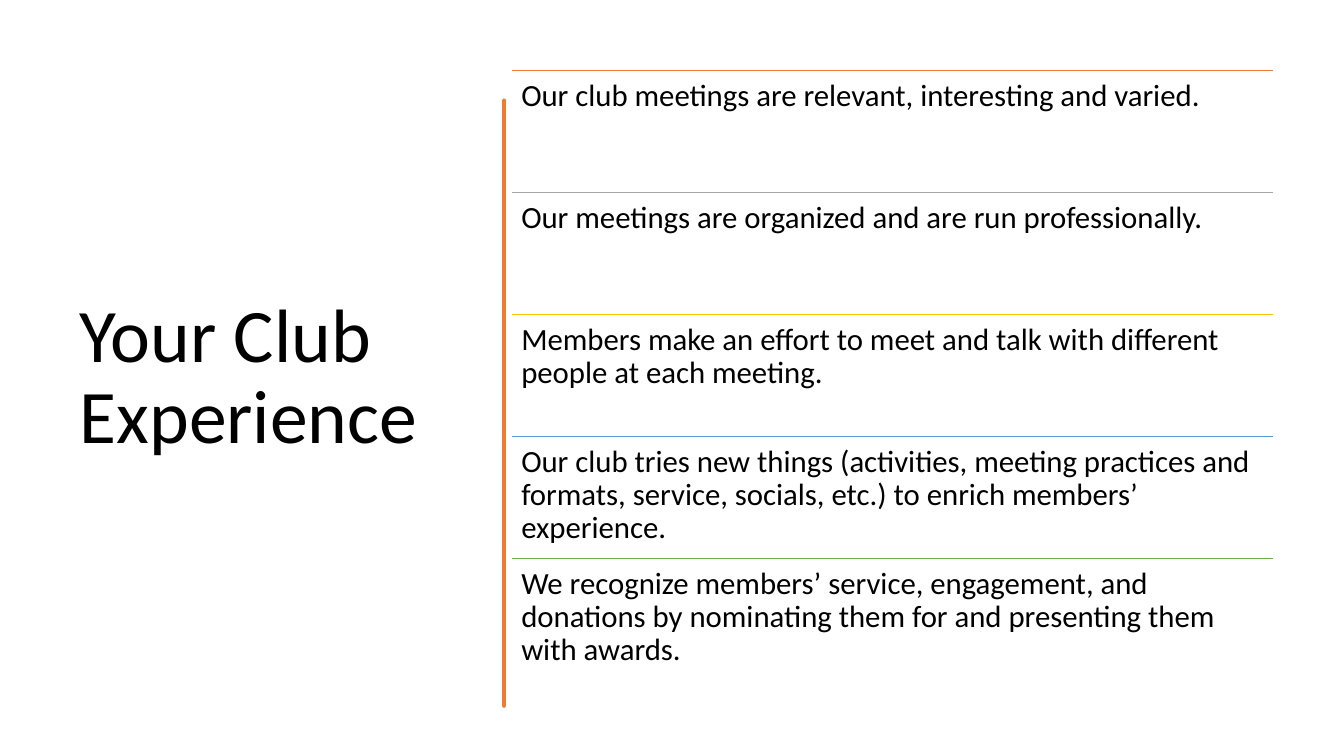
from dataclasses import dataclass

from lxml.etree import SubElement
from pptx import Presentation
from pptx.dml.color import RGBColor
from pptx.enum.shapes import MSO_CONNECTOR
from pptx.enum.text import MSO_ANCHOR, MSO_AUTO_SIZE, PP_ALIGN
from pptx.oxml.ns import qn
from pptx.slide import Slide
from pptx.text.text import _Paragraph as Paragraph
from pptx.util import Inches, Pt

BLACK = RGBColor(0x00, 0x00, 0x00)
ORANGE = RGBColor(0xED, 0x7D, 0x31)
GRAY = RGBColor(0xA5, 0xA5, 0xA5)
GOLD = RGBColor(0xFF, 0xC0, 0x00)
BLUE = RGBColor(0x5B, 0x9B, 0xD5)
GREEN = RGBColor(0x70, 0xAD, 0x47)

FONT = "Calibri"
TOP = 0.7
STATEMENT_LEFT = 5.08
STATEMENT_WIDTH = 7.55
STATEMENT_HEIGHT = 1.21
STATEMENT_INSET = 0.09

BRUSH_RIGHT = [
    (4.75, 0.84), (4.76, 1.15), (4.75, 1.49), (4.74, 1.9), (4.75, 2.26),
    (4.75, 2.94), (4.76, 3.3), (4.75, 3.6), (4.76, 4.0), (4.75, 4.33),
    (4.73, 4.7), (4.75, 5.13), (4.76, 5.5), (4.75, 5.81), (4.74, 6.2),
    (4.75, 6.76),
]
BRUSH_LEFT = [
    (4.73, 6.76), (4.72, 6.45), (4.73, 6.13), (4.74, 5.75), (4.73, 5.4),
    (4.72, 5.1), (4.73, 4.74), (4.72, 4.4), (4.73, 4.0), (4.72, 3.6),
    (4.73, 3.2), (4.72, 2.8), (4.73, 2.44), (4.74, 2.1), (4.73, 1.8),
    (4.72, 1.6), (4.73, 1.2), (4.73, 0.84),
]


@dataclass(frozen=True)
class Statement:
    text: str
    color: RGBColor


STATEMENTS = [
    Statement("Our club meetings are relevant, interesting and varied.", ORANGE),
    Statement("Our meetings are organized and are run professionally.", GRAY),
    Statement(
        "Members make an effort to meet and talk with different people "
        "at each meeting.", GOLD),
    Statement(
        "Our club tries new things (activities, meeting practices and formats, "
        "service, socials, etc.) to enrich members’ experience.", BLUE),
    Statement(
        "We recognize members’ service, engagement, and donations by "
        "nominating them for and presenting them with awards.", GREEN),
]


def format_paragraph(paragraph: Paragraph, size: float) -> None:
    paragraph.alignment = PP_ALIGN.LEFT
    paragraph.line_spacing = 0.9
    paragraph.font.name = FONT
    paragraph.font.size = Pt(size)
    paragraph.font.color.rgb = BLACK


def add_heading(slide: Slide) -> None:
    heading = slide.shapes.title
    heading.left, heading.top = Inches(0.69), Inches(TOP)
    heading.width, heading.height = Inches(3.74), Inches(6.11)
    frame = heading.text_frame
    frame.text = "Your Club Experience"
    frame.word_wrap = True
    frame.auto_size = MSO_AUTO_SIZE.NONE
    frame.vertical_anchor = MSO_ANCHOR.MIDDLE
    format_paragraph(frame.paragraphs[0], 54)


def add_brush_stroke(slide: Slide) -> None:
    start, *rest = BRUSH_RIGHT + BRUSH_LEFT
    builder = slide.shapes.build_freeform(*start, scale=Inches(1))
    builder.add_line_segments(rest, close=True)
    stroke = builder.convert_to_shape()
    stroke.shadow.inherit = False
    stroke.fill.solid()
    stroke.fill.fore_color.rgb = ORANGE
    stroke.line.color.rgb = ORANGE
    stroke.line.width = Pt(3.25)
    SubElement(stroke.element.spPr.find(qn("a:ln")), qn("a:round"))


def add_statement(slide: Slide, statement: Statement, top: float) -> None:
    left, width = Inches(STATEMENT_LEFT), Inches(STATEMENT_WIDTH)
    rule = slide.shapes.add_connector(
        MSO_CONNECTOR.STRAIGHT, left, Inches(top), left + width, Inches(top))
    rule.line.color.rgb = statement.color
    rule.line.width = Pt(1)
    SubElement(rule.element.spPr, qn("a:effectLst"))

    box = slide.shapes.add_textbox(
        left, Inches(top), width, Inches(STATEMENT_HEIGHT))
    frame = box.text_frame
    frame.text = statement.text
    frame.word_wrap = True
    frame.margin_left = frame.margin_right = Inches(STATEMENT_INSET)
    frame.margin_top = frame.margin_bottom = Inches(STATEMENT_INSET)
    format_paragraph(frame.paragraphs[0], 22)


def main() -> None:
    deck = Presentation()
    deck.slide_width, deck.slide_height = Inches(13.33), Inches(7.5)
    slide = deck.slides.add_slide(deck.slide_layouts.get_by_name("Title Only"))
    add_heading(slide)
    add_brush_stroke(slide)
    for row, statement in enumerate(STATEMENTS):
        add_statement(slide, statement, TOP + row * STATEMENT_HEIGHT)
    deck.save("out.pptx")


if __name__ == "__main__":
    main()
